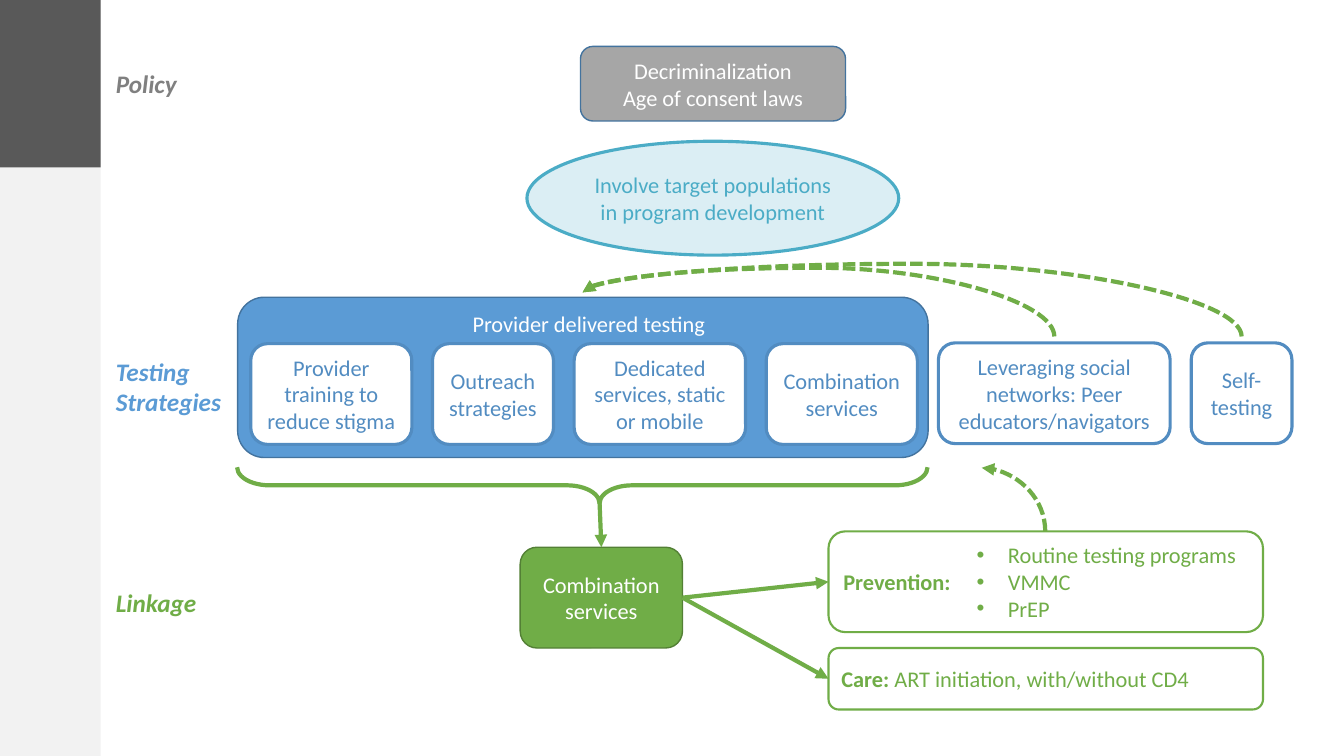
from lxml import etree
from pptx import Presentation
from pptx import util as u
from pptx.dml.color import RGBColor
from pptx.enum import dml, shapes, text
from pptx.oxml import ns

COLOURS = {
    "white": "FFFFFF", "pale": "F2F2F2", "charcoal": "595959",
    "grey": "A6A6A6", "policy": "808080", "mist": "DBEEF4", "teal": "4BACC6",
    "blue": "5B9BD5", "navy": "43739E", "steel": "528CC1",
    "green": "70AD47", "forest": "538035",
}
KIND = shapes.MSO_SHAPE
CENTER, LEFT = text.PP_ALIGN.CENTER, text.PP_ALIGN.LEFT
MIDDLE, TOP = text.MSO_ANCHOR.MIDDLE, text.MSO_ANCHOR.TOP
STRATEGY = {"fill": "white", "line": "steel", "weight": 2.25, "ink": "steel"}
LINKAGE = {"fill": "white", "line": "green", "weight": 1.5, "ink": "green", "align": LEFT}


def colour(name):
    """Return the named colour."""
    return RGBColor.from_string(COLOURS[name])


def apply(target, values):
    """Set each attribute in the dict on the target."""
    for key, value in values.items():
        setattr(target, key, value)


def write(frame, lines, ink, size=16, align=CENTER, anchor=MIDDLE, italic=None):
    """Fill a text frame with lines, each a list of (text, bold) runs."""
    apply(frame, {"word_wrap": True, "vertical_anchor": anchor})
    for index, line in enumerate(lines):
        paragraph = frame.add_paragraph() if index else frame.paragraphs[0]
        paragraph.alignment = align
        for words, bold in line:
            run = paragraph.add_run()
            run.text = words
            apply(run.font, {"name": "Calibri", "size": u.Pt(size), "bold": bold, "italic": italic})
            run.font.color.rgb = colour(ink)


def add_block(slide, kind, box, fill=None, line=None, weight=1, lines=(), **format_values):
    """Draw a preset shape with optional fill, outline and text."""
    block = slide.shapes.add_shape(kind, *map(u.Cm, box))
    block.shadow.inherit = False
    if fill:
        block.fill.solid()
        block.fill.fore_color.rgb = colour(fill)
    else:
        block.fill.background()
    if line:
        block.line.color.rgb = colour(line)
        block.line.width = u.Pt(weight)
    else:
        block.line.fill.background()
    if lines:
        write(block.text_frame, lines, **format_values)
    return block


def add_box(slide, box, words, **style):
    """Draw a rounded box with one plain line per string."""
    lines = [[(line, False)] for line in words.split("\n")]
    return add_block(slide, KIND.ROUNDED_RECTANGLE, box, lines=lines, **style)


def add_label(slide, box, words, ink):
    """Write a row heading at the left."""
    label = slide.shapes.add_textbox(*map(u.Cm, box))
    write(label.text_frame, [[(words, True)]], ink, size=18, align=LEFT, anchor=TOP, italic=True)


def add_bullets(slide, box, items, ink):
    """Write a bulleted list."""
    bullets = slide.shapes.add_textbox(*map(u.Cm, box))
    write(bullets.text_frame, [[(item, False)] for item in items], ink, align=LEFT, anchor=TOP)
    for paragraph in bullets.text_frame.paragraphs:
        properties = paragraph._p.get_or_add_pPr()
        indent = u.Cm(0.79)
        properties.set("marL", str(indent))
        properties.set("indent", str(-indent))
        etree.SubElement(properties, ns.qn("a:buFont")).set("typeface", "Arial")
        etree.SubElement(properties, ns.qn("a:buChar")).set("char", "•")


def add_arrow(slide, start, end, kind=shapes.MSO_CONNECTOR.STRAIGHT, dash=None):
    """Draw a green arrow between two points."""
    arrow = slide.shapes.add_connector(kind, *map(u.Cm, (*start, *end)))
    arrow.line.color.rgb = colour("green")
    apply(arrow.line, {"width": u.Pt(3), "dash_style": dash})
    properties = arrow._element.spPr
    outline = properties.get_or_add_ln()
    etree.SubElement(outline, ns.qn("a:tailEnd")).set("type", "triangle")
    etree.SubElement(properties, ns.qn("a:effectLst"))
    return arrow


def add_arc(slide, start, end, bulge=None):
    """Draw a dashed curve that leaves upwards and ends to the left."""
    arc = add_arrow(slide, start, end, shapes.MSO_CONNECTOR.CURVE, dml.MSO_LINE.SQUARE_DOT)
    (x1, y1), (x2, y2) = start, end
    width, height = y1 - y2, x1 - x2
    apply(arc, {
        "left": u.Cm((x1 + x2 - width) / 2), "top": u.Cm((y1 + y2 - height) / 2),
        "width": u.Cm(width), "height": u.Cm(height),
    })
    frame = arc._element.spPr.find(ns.qn("a:xfrm"))
    frame.attrib.pop("flipH", None)
    frame.set("rot", "16200000")
    frame.set("flipV", "1")
    geometry = arc._element.spPr.find(ns.qn("a:prstGeom"))
    if bulge is None:
        geometry.set("prst", "curvedConnector2")
    else:
        guide = etree.SubElement(geometry.find(ns.qn("a:avLst")), ns.qn("a:gd"))
        guide.set("name", "adj1")
        guide.set("fmla", f"val {round(bulge * 100000)}")


def add_policy(slide):
    """Draw the policy row and the target population oval."""
    add_block(slide, KIND.OVAL, (13.28, 3.56, 9.37, 2.87), "mist", "teal", 2.25,
              [[("Involve target populations in program development", False)]], ink="teal")
    add_box(slide, (14.63, 1.17, 6.68, 1.88), "Decriminalization\nAge of consent laws",
            fill="grey", line="navy", ink="white")
    add_label(slide, (2.67, 1.6, 3.68, 1.02), "Policy", "policy")


def add_testing(slide):
    """Draw the testing strategies row."""
    provider = add_box(slide, (5.99, 7.49, 17.4, 4.04), "Provider delivered testing",
                       fill="blue", line="navy", ink="white", anchor=TOP)
    provider.text_frame.margin_left = u.Cm(0.55)
    left, gap = 6.32, 0.52
    for words, width in (("Provider training to reduce stigma", 4.06),
                         ("Outreach strategies", 3.05),
                         ("Dedicated services, static or mobile", 4.32),
                         ("Combination services", 3.81)):
        add_box(slide, (left, 8.66, width, 2.54), words, **STRATEGY)
        left += width + gap
    add_box(slide, (23.65, 8.64, 5.84, 2.54),
            "Leveraging social networks: Peer educators/navigators", **STRATEGY)
    add_box(slide, (30.02, 8.64, 2.54, 2.54), "Self-testing", **STRATEGY)
    add_label(slide, (2.67, 8.86, 3.68, 1.8), "Testing Strategies", "blue")
    for start_x, bulge in ((26.57, 1.56), (31.29, 1.65)):
        add_arc(slide, (start_x, 8.48), (14.68, 7.37), bulge)


def add_linkage(slide):
    """Draw the linkage row with its brace and arrows."""
    brace = add_block(slide, KIND.RIGHT_BRACE, (14.22, 3.53, 0.91, 17.4), line="green", weight=3)
    brace.rotation = 90
    brace.adjustments[0], brace.adjustments[1] = 0.9, 0.475
    prevention = add_block(slide, KIND.ROUNDED_RECTANGLE, (20.88, 13.39, 10.95, 2.54),
                           lines=[[("Prevention:", True)]], **LINKAGE)
    services = add_box(slide, (13.11, 13.79, 4.09, 2.54), "Combination services",
                       fill="green", line="forest", ink="white")
    care = add_block(slide, KIND.ROUNDED_RECTANGLE, (20.88, 16.33, 10.95, 1.55),
                     lines=[[("Care: ", True), ("ART initiation, with/without CD4", False)]],
                     **LINKAGE)
    add_bullets(slide, (24.36, 13.51, 7.47, 2.31),
                ("Routine testing programs", "VMMC", "PrEP"), "green")
    for target, y in ((prevention, 14.66), (care, 17.11)):
        arrow = add_arrow(slide, (17.2, 15.06), (20.88, y))
        arrow.begin_connect(services, 3)
        arrow.end_connect(target, 1)
    add_arrow(slide, (15.11, 12.67), (15.15, 13.79)).end_connect(services, 0)
    add_arc(slide, (26.34, 13.39), (24.74, 11.79))
    add_label(slide, (2.67, 14.68, 5.54, 1.02), "Linkage", "green")


def main():
    """Build and save the slide."""
    deck = Presentation()
    apply(deck, {"slide_width": u.Cm(33.87), "slide_height": u.Cm(19.05)})
    slide = deck.slides.add_slide(deck.slide_layouts[6])
    for height, fill in ((19.05, "pale"), (4.22, "charcoal")):
        add_block(slide, KIND.RECTANGLE, (0, 0, 2.54, height), fill)
    add_policy(slide)
    add_testing(slide)
    add_linkage(slide)
    deck.save("out.pptx")


if __name__ == "__main__":
    main()
